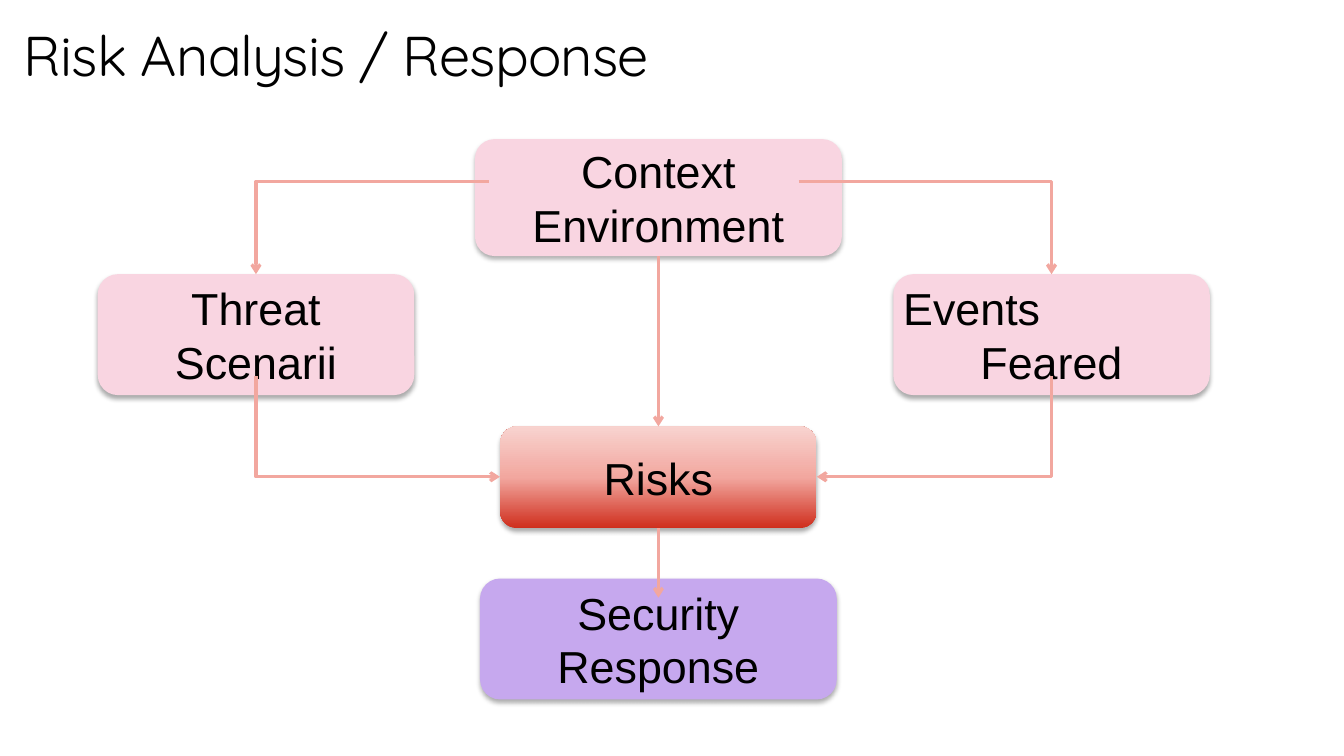
from copy import deepcopy

from lxml import etree
from pptx import Presentation
from pptx.dml.color import RGBColor
from pptx.enum.shapes import MSO_CONNECTOR as Connector, MSO_SHAPE as Shape
from pptx.enum.text import MSO_ANCHOR as Anchor, MSO_AUTO_SIZE as AutoSize, PP_ALIGN as Align
from pptx.oxml import parse_xml
from pptx.oxml.ns import nsdecls, qn
from pptx.util import Inches, Pt

SLIDE_WIDTH, SLIDE_HEIGHT = Inches(13.33), Inches(7.5)
PINK, PURPLE, ARROW = "F9D5E1", "C6A8EE", "F2A79F"
RISK_GRADIENT = ["CF2E1D", "F2A79F", "F8D3CF"]
# Centres of the three columns, in percent of the slide's width
THREATS_X, RISKS_X, EVENTS_X = 19.05, 48.99, 78.24
BOTTOM, TOP = 2, 0


def across(percent):
    return round(SLIDE_WIDTH * percent / 100)


def down(percent):
    return round(SLIDE_HEIGHT * percent / 100)


def colour(hex_code):
    return RGBColor.from_string(hex_code)


def style_text(paragraph, font_name, size):
    for run in paragraph.runs:
        run.font.name = font_name
        run.font.size = Pt(size)
        run.font.color.rgb = colour("000000")


def add_title(slide, wording):
    title = slide.shapes.title
    title.left, title.top = across(1), down(0.13)
    title.width, title.height = across(86.27), down(12.27)
    frame = title.text_frame
    frame.text = wording
    frame.auto_size = AutoSize.NONE
    frame.vertical_anchor = Anchor.BOTTOM
    heading = frame.paragraphs[0]
    heading.alignment = Align.LEFT
    heading.line_spacing = 0.9
    style_text(heading, "Quicksand", 40)
    heading.runs[0].font._element.set("spc", "-50")


def cast_shadow(box):
    box.shadow.inherit = False
    box._element.spPr.find(qn("a:effectLst")).append(parse_xml(
        f'<a:outerShdw {nsdecls("a")} blurRad="44450" dist="27940" dir="5400000" rotWithShape="0">'
        '<a:srgbClr val="000000"><a:alpha val="32000"/></a:srgbClr></a:outerShdw>'))


def fill_gradient(box, hex_codes):
    """Spread the colours evenly from the bottom of the box to its top."""
    box.fill.gradient()
    box.fill.gradient_angle = 90
    stop_list = box._element.spPr.find(qn("a:gradFill")).find(qn("a:gsLst"))
    while len(stop_list) < len(hex_codes):
        stop_list.append(deepcopy(stop_list[0]))
    for index, (stop, hex_code) in enumerate(zip(box.fill.gradient_stops, hex_codes)):
        stop.position = index / (len(hex_codes) - 1)
        stop.color.rgb = colour(hex_code)


def add_box(slide, wording, centre, top, width, height, fill):
    box = slide.shapes.add_shape(Shape.ROUNDED_RECTANGLE, across(centre - width / 2),
                                 down(top), across(width), down(height))
    if isinstance(fill, str):
        box.fill.solid()
        box.fill.fore_color.rgb = colour(fill)
    else:
        fill_gradient(box, fill)
    box.line.fill.background()
    cast_shadow(box)
    frame = box.text_frame
    frame.text = wording
    frame.word_wrap = True
    frame.vertical_anchor = Anchor.MIDDLE
    frame.margin_left = frame.margin_right = Inches(0.04)
    frame.margin_top = frame.margin_bottom = 0
    for paragraph in frame.paragraphs:
        paragraph.alignment = Align.CENTER
        style_text(paragraph, "Arial", 32)
    return box


def add_arrow(slide, kind, start, end, arrow_end="tailEnd"):
    arrow = slide.shapes.add_connector(kind, across(start[0]), down(start[1]),
                                       across(end[0]), down(end[1]))
    arrow.line.color.rgb = colour(ARROW)
    arrow.line.width = Pt(2.25)
    etree.SubElement(arrow.line._get_or_add_ln(), qn(f"a:{arrow_end}"), type="arrow")
    etree.SubElement(arrow._element.spPr, qn("a:effectLst"))
    return arrow


def add_corner_arrow(slide, start, end, arrow_end="tailEnd"):
    """Run level from start, turn once, then run upright to end."""
    arrow = add_arrow(slide, Connector.ELBOW, start, end, arrow_end)
    arrow._element.spPr.find(qn("a:prstGeom")).set("prst", "bentConnector2")


def main():
    deck = Presentation()
    deck.slide_width, deck.slide_height = SLIDE_WIDTH, SLIDE_HEIGHT
    slide = deck.slides.add_slide(deck.slide_layouts[5])
    add_title(slide, "Risk Analysis / Response")

    context = add_box(slide, "Context\nEnvironment", RISKS_X, 18.4, 27.3, 15.47, PINK)
    events = add_box(slide, "Events\nFeared", EVENTS_X, 36.27, 23.55, 16, PINK)
    events.text_frame.paragraphs[0].alignment = Align.LEFT
    add_box(slide, "Threat Scenarii", THREATS_X, 36.27, 23.55, 16, PINK)
    risks = add_box(slide, "Risks", RISKS_X, 56.4, 23.55, 13.47, RISK_GRADIENT)
    add_box(slide, "Security Response", RISKS_X, 76.53, 26.55, 16, PURPLE)

    for centre, context_side, risks_side in ((THREATS_X, 36.38, 37.2),
                                             (EVENTS_X, 59.42, 60.77)):
        add_corner_arrow(slide, (context_side, 24), (centre, 36.27))
        add_corner_arrow(slide, (risks_side, 63.07), (centre, 49.73), "headEnd")

    to_risks = add_arrow(slide, Connector.STRAIGHT, (RISKS_X, 33.87), (RISKS_X, 56.4))
    to_risks.begin_connect(context, BOTTOM)
    to_risks.end_connect(risks, TOP)
    to_response = add_arrow(slide, Connector.STRAIGHT, (RISKS_X, 69.87), (RISKS_X, 79.07))
    to_response.begin_connect(risks, BOTTOM)

    deck.save("out.pptx")


if __name__ == "__main__":
    main()
